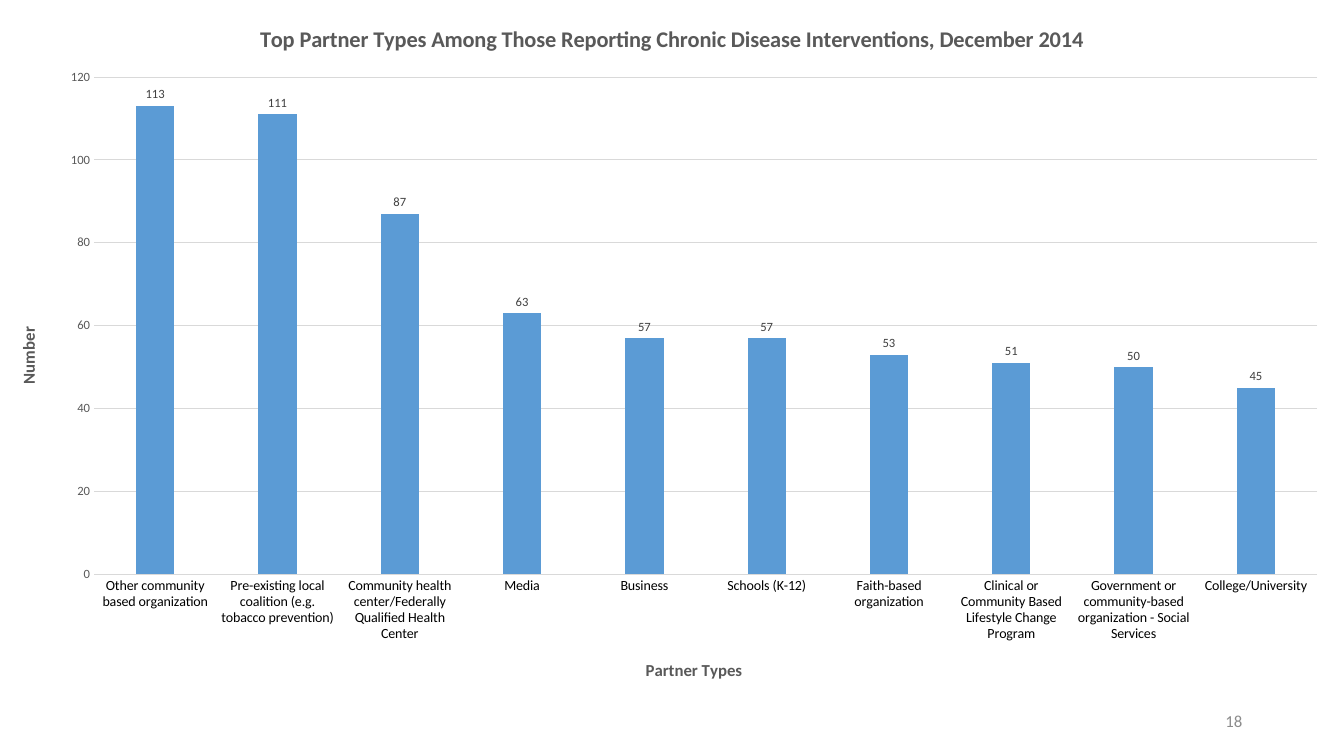
from lxml import etree
from pptx import Presentation
from pptx.chart.data import CategoryChartData
from pptx.dml.color import RGBColor
from pptx.enum.chart import XL_CHART_TYPE, XL_LABEL_POSITION, XL_TICK_MARK
from pptx.enum.text import MSO_ANCHOR, PP_ALIGN
from pptx.oxml.ns import qn
from pptx.util import Inches, Pt

COLUMNS = XL_CHART_TYPE.COLUMN_CLUSTERED
OUTSIDE_END = XL_LABEL_POSITION.OUTSIDE_END
NO_TICK = XL_TICK_MARK.NONE
MIDDLE = MSO_ANCHOR.MIDDLE
RIGHT = PP_ALIGN.RIGHT

PARTNERS = {
    "Other community based organization": 113,
    "Pre-existing local coalition (e.g. tobacco prevention)": 111,
    "Community health center/Federally Qualified Health Center": 87,
    "Media": 63,
    "Business": 57,
    "Schools (K-12)": 57,
    "Faith-based organization": 53,
    "Clinical or Community Based Lifestyle Change Program": 51,
    "Government or community-based organization - Social Services": 50,
    "College/University": 45,
}
PLOT_AREA = {"x": 0.07, "y": 0.11, "w": 0.91, "h": 0.71}


def rgb(value):
    return RGBColor.from_string(value)


def style_font(font, size, color, bold=False):
    font.name = "Calibri"
    font.size = Pt(size)
    font.bold = bold
    font.color.rgb = rgb(color)


def write_text(text_frame, text, size, color, bold=False, align=None):
    paragraph = text_frame.paragraphs[0]
    paragraph.alignment = align
    run = paragraph.add_run()
    run.text = text
    style_font(run.font, size, color, bold)


def place_plot(chart, area):
    plot_area = chart._chartSpace.find(".//" + qn("c:plotArea"))
    for layout in plot_area.findall(qn("c:layout")):
        plot_area.remove(layout)
    layout = etree.Element(qn("c:layout"))
    manual = etree.SubElement(layout, qn("c:manualLayout"))
    settings = {"layoutTarget": "inner", "xMode": "edge", "yMode": "edge", **area}
    for name, value in settings.items():
        etree.SubElement(manual, qn("c:" + name)).set("val", str(value))
    plot_area.insert(0, layout)


class SlideBuilder:
    title_color = "595959"
    line_color = "D9D9D9"
    bar_color = "5B9BD5"

    def __init__(self, slide):
        self.slide = slide

    def text(self, text, left, top, width, height, **text_format):
        box = self.slide.shapes.add_textbox(
            Inches(left), Inches(top), Inches(width), Inches(height))
        text_frame = box.text_frame
        text_frame.word_wrap = True
        text_frame.vertical_anchor = MIDDLE
        write_text(text_frame, text, **text_format)

    def rule(self, line):
        line.color.rgb = rgb(self.line_color)
        line.width = Pt(0.75)

    def axis(self, axis, title, size, color):
        axis.major_tick_mark = axis.minor_tick_mark = NO_TICK
        style_font(axis.tick_labels.font, size, color)
        write_text(axis.axis_title.text_frame, title, 12, self.title_color, True)

    def column_chart(self, values, title, category_title, value_title,
                     left, top, width, height):
        data = CategoryChartData(number_format="0")
        data.categories = list(values)
        data.add_series("Series 1", list(values.values()))
        chart = self.slide.shapes.add_chart(
            COLUMNS, Inches(left), Inches(top), Inches(width), Inches(height), data).chart
        style_font(chart.font, 10, "000000")
        chart.has_legend = False
        chart.has_title = True
        write_text(chart.chart_title.text_frame, title, 16, self.title_color, True)
        chart.chart_title.include_in_layout = False

        self.axis(chart.category_axis, category_title, 10, "000000")
        self.rule(chart.category_axis.format.line)
        value_axis = chart.value_axis
        self.axis(value_axis, value_title, 9, self.title_color)
        value_axis.minimum_scale, value_axis.maximum_scale = 0, 120
        value_axis.major_unit = 20
        value_axis.format.line.fill.background()
        self.rule(value_axis.major_gridlines.format.line)

        plot = chart.plots[0]
        plot.vary_by_categories = False
        plot.gap_width = 219
        plot.overlap = -27
        series = plot.series[0]
        series.format.fill.solid()
        series.format.fill.fore_color.rgb = rgb(self.bar_color)
        labels = series.data_labels
        labels.show_value = True
        labels.position = OUTSIDE_END
        style_font(labels.font, 9, "404040")
        place_plot(chart, PLOT_AREA)


def main():
    presentation = Presentation()
    presentation.slide_width = Inches(13.33)
    presentation.slide_height = Inches(7.5)
    builder = SlideBuilder(presentation.slides.add_slide(presentation.slide_layouts[6]))
    builder.text("18", 9.42, 6.95, 3, 0.4, size=12, color="8C8C8C", align=RIGHT)
    builder.column_chart(
        PARTNERS,
        "Top Partner Types Among Those Reporting Chronic Disease Interventions, December 2014",
        "Partner Types", "Number", 0, 0, 13.33, 6.95)
    presentation.save("out.pptx")


if __name__ == "__main__":
    main()
